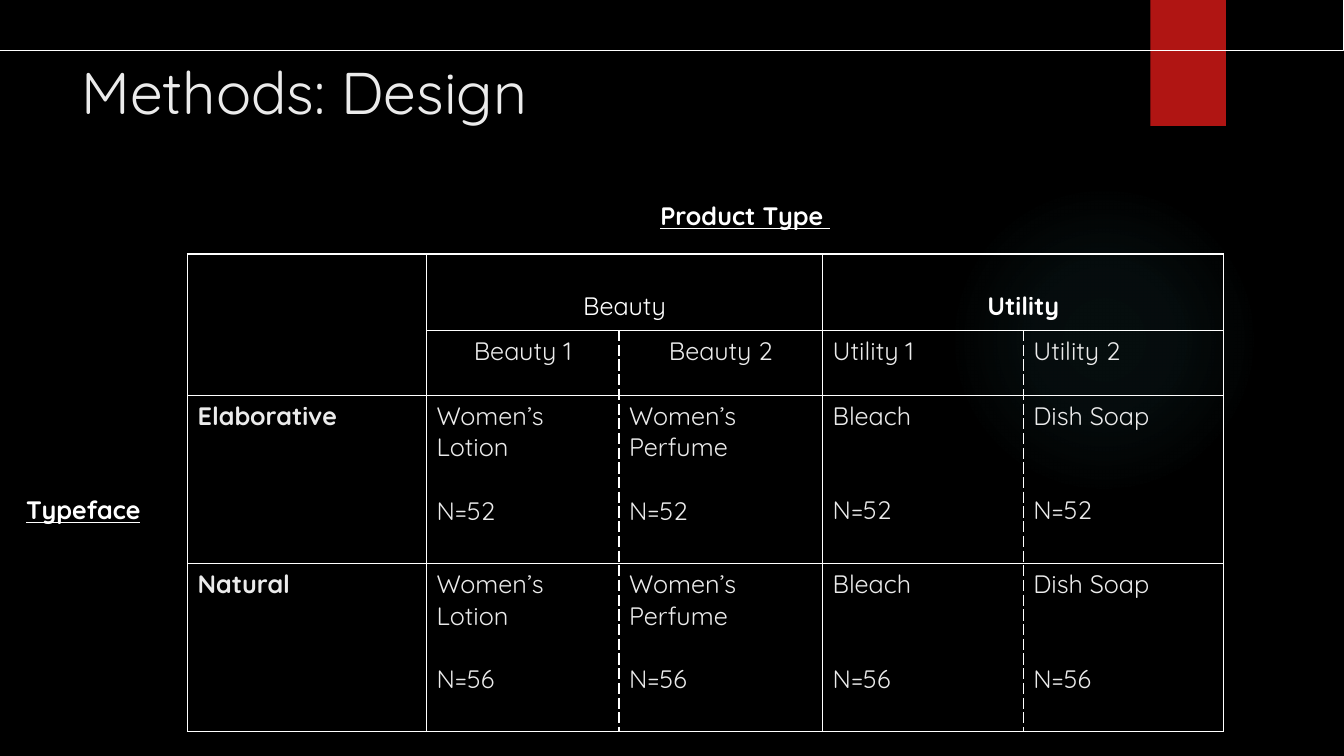
import pptx
import pptx.util
import pptx.dml.color
import pptx.enum.shapes
import pptx.enum.text
import pptx.oxml
import pptx.oxml.ns

Inches, Pt = pptx.util.Inches, pptx.util.Pt
RECTANGLE = pptx.enum.shapes.MSO_SHAPE.RECTANGLE
ALIGN = pptx.enum.text.PP_ALIGN

# Content
TITLE = "Methods: Design"
AXIS_LABELS = [
    ("Product Type ", 6.45, 1.94, 2.45),
    ("Typeface", 0.16, 4.86, 1.36),
]
PRODUCT_TYPES = [("Beauty", 1, False), ("Utility", 3, True)]
STIMULI = [
    ("Beauty 1", ALIGN.CENTER),
    ("Beauty 2", ALIGN.CENTER),
    ("Utility 1", ALIGN.LEFT),
    ("Utility 2", ALIGN.LEFT),
]
PRODUCTS = [("Women’s Lotion", 1), ("Women’s Perfume", 1), ("Bleach", 2), ("Dish Soap", 2)]
TYPEFACES = [("Elaborative", "N=52"), ("Natural", "N=56")]

# Style
FONT = "Quicksand"
BODY_SIZE = 18
LINE_HEIGHT = 22.5  # points, one body line
COLORS = {"black": "000000", "white": "FFFFFF", "pale": "EBEBEB", "red": "B01513", "glow": "50B9C1"}
GLOW_STOPS = [(0, 7), (36, 6), (69, 0)]  # position and opacity in percent
COLUMN_WIDTHS = [2.37, 1.91, 2.02, 1.99, 1.99]
ROW_HEIGHTS = [0.76, 0.64, 1.67, 1.67]
DASHED_COLUMN_EDGES = (2, 4)


def rgb(name):
    return pptx.dml.color.RGBColor.from_string(COLORS[name])


def add_shape(slide, kind, left, top, width, height):
    shape = slide.shapes.add_shape(kind, Inches(left), Inches(top), Inches(width), Inches(height))
    shape.shadow.inherit = False
    shape.line.fill.background()
    return shape


def style_paragraph(paragraph, text, size=BODY_SIZE, color="pale", bold=False, align=ALIGN.LEFT):
    paragraph.text = text
    paragraph.alignment = align
    font = paragraph.font
    font.name, font.size, font.bold = FONT, Pt(size), bold
    font.color.rgb = rgb(color)
    return paragraph


def add_text(slide, text, left, top, width, height, **style):
    box = slide.shapes.add_textbox(Inches(left), Inches(top), Inches(width), Inches(height))
    box.text_frame.word_wrap = True
    return style_paragraph(box.text_frame.paragraphs[0], text, **style)


def add_glow(slide):
    glow = add_shape(slide, pptx.enum.shapes.MSO_SHAPE.OVAL, 9.41, 1.83, 3.08, 3.08)
    stops = "".join(
        f'<a:gs pos="{position * 1000}"><a:srgbClr val="{COLORS["glow"]}">'
        f'<a:alpha val="{opacity * 1000}"/></a:srgbClr></a:gs>'
        for position, opacity in GLOW_STOPS
    )
    gradient = pptx.oxml.parse_xml(
        f'<a:gradFill {pptx.oxml.ns.nsdecls("a")}><a:gsLst>{stops}</a:gsLst><a:path path="circle">'
        '<a:fillToRect l="50000" t="50000" r="50000" b="50000"/></a:path></a:gradFill>'
    )
    properties = glow._element.spPr
    properties.find(pptx.oxml.ns.qn("a:prstGeom")).addnext(gradient)


def cell_borders(row, column):
    """Edges of a cell: solid, dashed inside a product type, none inside a merge."""
    edges = []
    for tag, edge in (("lnL", column), ("lnR", column + 1)):
        inner = edge in DASHED_COLUMN_EDGES
        if not (inner and row == 0):
            edges.append((tag, "sysDash" if inner else "solid"))
    for tag, edge in (("lnT", row), ("lnB", row + 1)):
        if not (column == 0 and edge == 1):
            edges.append((tag, "solid"))
    return edges


def draw_borders(cell, edges):
    properties = cell._tc.get_or_add_tcPr()
    for index, (tag, dash) in enumerate(edges):
        properties.insert(index, pptx.oxml.parse_xml(
            f'<a:{tag} {pptx.oxml.ns.nsdecls("a")} w="{Pt(1)}"><a:solidFill>'
            f'<a:srgbClr val="{COLORS["white"]}"/></a:solidFill><a:prstDash val="{dash}"/></a:{tag}>'
        ))


def add_design_table(slide):
    frame = slide.shapes.add_table(
        len(ROW_HEIGHTS), len(COLUMN_WIDTHS), Inches(1.86), Inches(2.52),
        Inches(sum(COLUMN_WIDTHS)), Inches(sum(ROW_HEIGHTS)))
    table = frame.table
    table.first_row = table.horz_banding = False
    for column, width in zip(table.columns, COLUMN_WIDTHS):
        column.width = Inches(width)
    for row, height in zip(table.rows, ROW_HEIGHTS):
        row.height = Inches(height)

    for row in range(len(ROW_HEIGHTS)):
        for column in range(len(COLUMN_WIDTHS)):
            cell = table.cell(row, column)
            cell.fill.background()
            draw_borders(cell, cell_borders(row, column))

    # Header rows
    table.cell(0, 0).merge(table.cell(1, 0))
    for name, column, bold in PRODUCT_TYPES:
        cell = table.cell(0, column)
        cell.merge(table.cell(0, column + 1))
        cell.margin_top = Inches(0.36)
        style_paragraph(cell.text_frame.paragraphs[0], name, color="white", bold=bold, align=ALIGN.CENTER)
    for column, (name, align) in enumerate(STIMULI, start=1):
        style_paragraph(table.cell(1, column).text_frame.paragraphs[0], name, align=align)

    # Typeface rows
    for row, (typeface, count) in enumerate(TYPEFACES, start=2):
        style_paragraph(table.cell(row, 0).text_frame.paragraphs[0], typeface, bold=True)
        for column, (product, gap_lines) in enumerate(PRODUCTS, start=1):
            text_frame = table.cell(row, column).text_frame
            style_paragraph(text_frame.paragraphs[0], product)
            paragraph = style_paragraph(text_frame.add_paragraph(), count)
            paragraph.space_before = Pt(gap_lines * LINE_HEIGHT)


def main():
    presentation = pptx.Presentation()
    presentation.slide_width, presentation.slide_height = Inches(13.33), Inches(7.5)
    slide = presentation.slides.add_slide(presentation.slide_layouts[6])
    slide.background.fill.solid()
    slide.background.fill.fore_color.rgb = rgb("black")

    # Backdrop
    add_glow(slide)
    ribbon = add_shape(slide, RECTANGLE, 11.41, 0, 0.75, 1.25)
    ribbon.fill.solid()
    ribbon.fill.fore_color.rgb = rgb("red")

    # Title and top band
    add_text(slide, TITLE, 0.71, 0.5, 10.29, 1.53, size=42)
    band = add_shape(slide, RECTANGLE, 0, 0, 13.33, 0.5)
    band.fill.background()
    band.line.color.rgb = rgb("white")
    band.line.width = Pt(0.75)

    # Design table and its axis labels
    add_design_table(slide)
    for text, left, top, width in AXIS_LABELS:
        label = add_text(slide, text, left, top, width, 0.4, color="white", bold=True)
        label.font.underline = True

    presentation.save("out.pptx")


if __name__ == "__main__":
    main()
